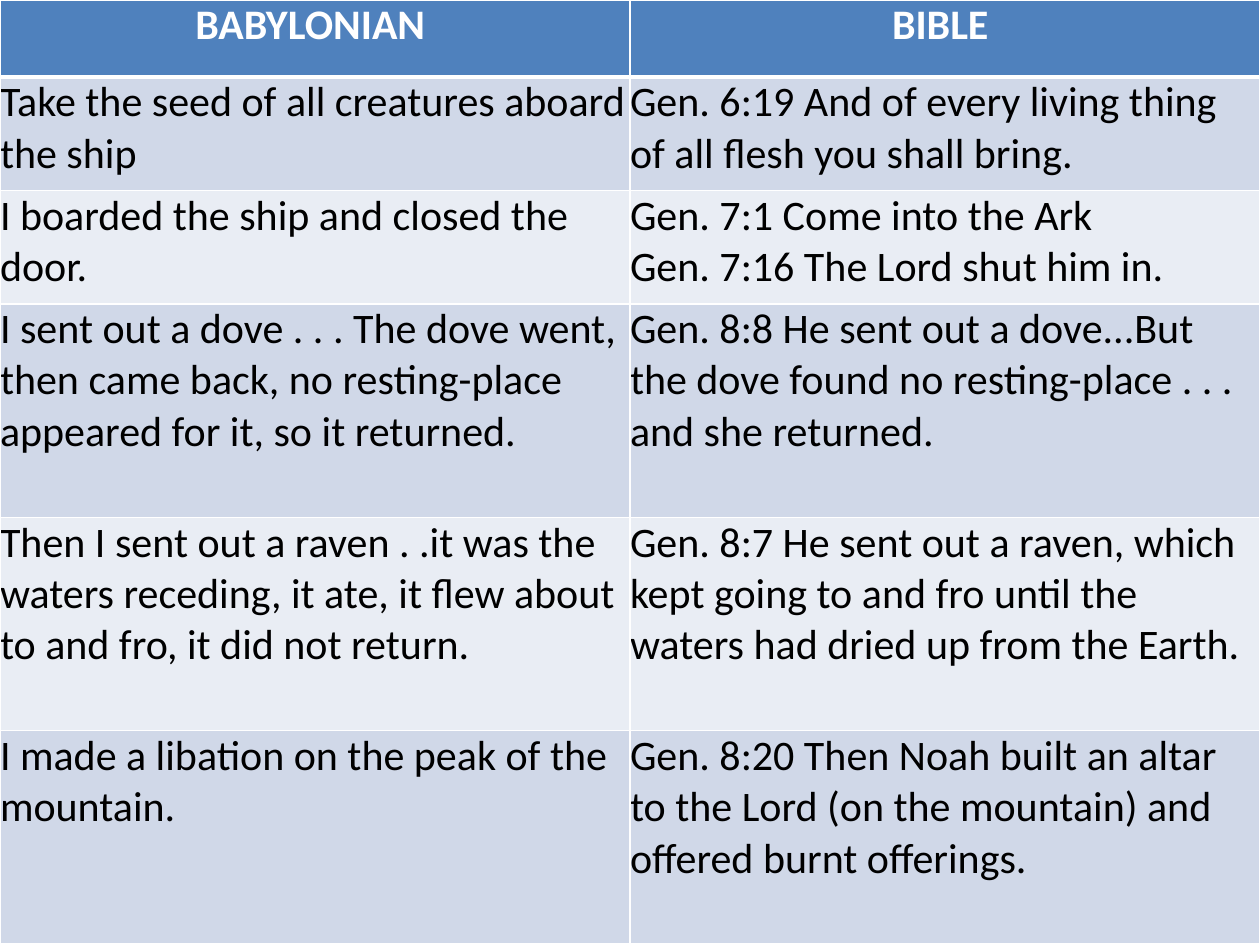
from lxml.etree import SubElement
from pptx import Presentation
from pptx.dml.color import RGBColor as RGB
from pptx.enum.text import PP_ALIGN as Align
from pptx.oxml.ns import qn
from pptx.util import Pt

COLORS = {"header": "4F81BD", "odd": "D0D8E8", "even": "E9EDF4",
          "border": "FFFFFF", "header_text": "FFFFFF", "text": "000000"}
FONT, SIZE = "Calibri", 24
SLIDE_W, SLIDE_H = 720, 540
HEADER_BORDERS = {"lnL": 1, "lnR": 1, "lnT": 1, "lnB": 3}

# Row height, Babylonian text, Bible text
ROWS = [
    (44, "BABYLONIAN ", "BIBLE "),
    (64.8, "Take the seed of all creatures aboard the ship",
     "Gen. 6:19 And of every living thing of all flesh you shall bring."),
    (64.8, "I boarded the ship and closed the door.",
     "Gen. 7:1 Come into the Ark\nGen. 7:16 The Lord shut him in."),
    (122, "I sent out a dove . . . The dove went, then came back, "
     "no resting-place appeared for it, so it returned.",
     "Gen. 8:8 He sent out a dove...But the dove found no resting-place . . . "
     "and she returned."),
    (122, "Then I sent out a raven . .it was the waters receding, it ate, "
     "it flew about to and fro, it did not return.",
     "Gen. 8:7 He sent out a raven, which kept going to and fro until the "
     "waters had dried up from the Earth."),
    (122, "I made a libation on the peak of the mountain.",
     "Gen. 8:20 Then Noah built an altar to the Lord (on the mountain) and "
     "offered burnt offerings."),
]


def add_borders(cell, borders):
    """Put the border lines before the fill, as the schema orders them."""
    tc_pr = cell._tc.get_or_add_tcPr()
    for i, (side, width) in enumerate(borders.items()):
        ln = SubElement(tc_pr, qn(f"a:{side}"), w=str(Pt(width)))
        fill = SubElement(ln, qn("a:solidFill"))
        SubElement(fill, qn("a:srgbClr"), val=COLORS["border"])
        tc_pr.insert(i, ln)


def fill_cell(cell, text, fill, is_header):
    cell.margin_left = cell.margin_right = cell.margin_top = cell.margin_bottom = 0
    cell.fill.solid()
    cell.fill.fore_color.rgb = RGB.from_string(COLORS[fill])
    p = cell.text_frame.paragraphs[0]
    p.text = text
    p.alignment = Align.CENTER if is_header else Align.LEFT
    color = COLORS["header_text" if is_header else "text"]
    for r in p.runs:
        r.font.name, r.font.size, r.font.bold = FONT, Pt(SIZE), is_header
        r.font.color.rgb = RGB.from_string(color)
    if is_header:
        add_borders(cell, HEADER_BORDERS)


def main():
    prs = Presentation()
    prs.slide_width, prs.slide_height = Pt(SLIDE_W), Pt(SLIDE_H)
    s = prs.slides.add_slide(prs.slide_layouts[6])
    height = sum(row[0] for row in ROWS)
    table = s.shapes.add_table(len(ROWS), 2, 0, 0, Pt(SLIDE_W), Pt(height)).table
    for i, (row_height, *texts) in enumerate(ROWS):
        table.rows[i].height = Pt(row_height)
        fill = "header" if i == 0 else "odd" if i % 2 else "even"
        for j, text in enumerate(texts):
            fill_cell(table.cell(i, j), text, fill, i == 0)
    prs.save("out.pptx")


if __name__ == "__main__":
    main()
